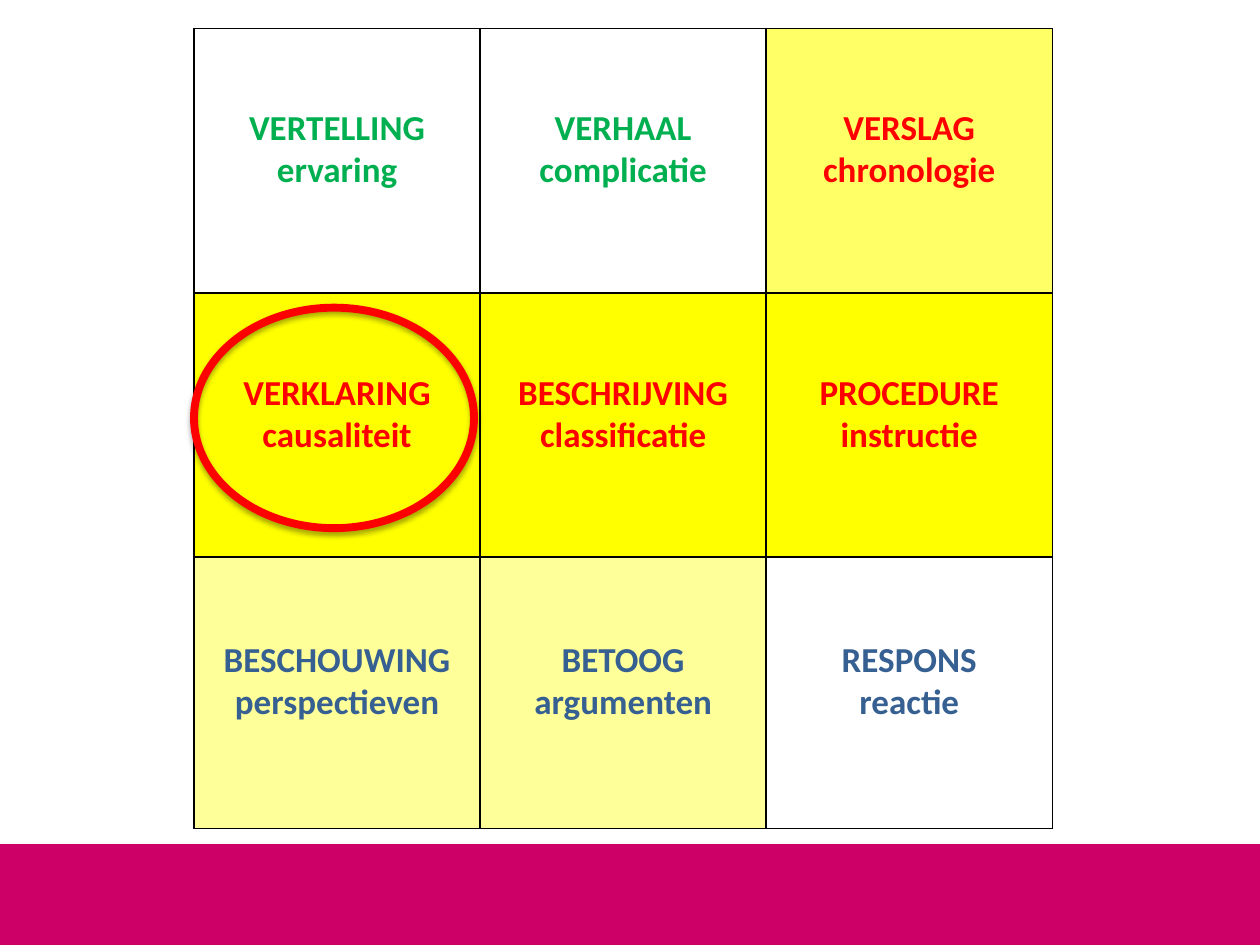
import pptx
import pptx.util
import pptx.dml.color
import pptx.enum.shapes
import pptx.enum.text
import pptx.oxml
import pptx.oxml.ns

Pt = pptx.util.Pt

COLORS = {
    "white": "FFFFFF", "black": "000000", "band": "CC0066",
    "green": "00B050", "red": "FF0000", "blue": "376092",
    "light": "FFFF66", "bright": "FFFF00", "pale": "FFFF99",
}
GENRES = [
    [("VERTELLING", "ervaring", "green", "white"),
     ("VERHAAL", "complicatie", "green", "white"),
     ("VERSLAG", "chronologie", "red", "light")],
    [("VERKLARING", "causaliteit", "red", "bright"),
     ("BESCHRIJVING", "classificatie", "red", "bright"),
     ("PROCEDURE", "instructie", "red", "bright")],
    [("BESCHOUWING", "perspectieven", "blue", "pale"),
     ("BETOOG", "argumenten", "blue", "pale"),
     ("RESPONS", "reactie", "blue", "white")],
]
COL_WIDTH = 163.5
ROW_HEIGHTS = [151, 151, 155]
NS = pptx.oxml.ns.nsdecls("a")


def rgb(name):
    return pptx.dml.color.RGBColor.from_string(COLORS[name])


def add_shadow(shape):
    shape.shadow.inherit = False
    effects = shape._element.spPr.find(pptx.oxml.ns.qn("a:effectLst"))
    effects.append(pptx.oxml.parse_xml(
        f'<a:outerShdw {NS} blurRad="{Pt(3.15)}" dist="{Pt(1.8)}" dir="5400000" rotWithShape="0">'
        f'<a:srgbClr val="{COLORS["black"]}"><a:alpha val="35000"/></a:srgbClr></a:outerShdw>'))


def add_borders(cell):
    tcPr = cell._tc.get_or_add_tcPr()
    for side in ("lnL", "lnR", "lnT", "lnB"):
        tcPr.append(pptx.oxml.parse_xml(
            f'<a:{side} {NS} w="{Pt(1)}"><a:solidFill>'
            f'<a:srgbClr val="{COLORS["black"]}"/></a:solidFill></a:{side}>'))


def fill_cell(cell, genre, feature, ink, fill):
    add_borders(cell)
    cell.fill.solid()
    cell.fill.fore_color.rgb = rgb(fill)
    cell.vertical_anchor = pptx.enum.text.MSO_ANCHOR.MIDDLE
    cell.margin_left = cell.margin_right = Pt(3)
    cell.margin_top = cell.margin_bottom = 0
    cell.text_frame.text = f"{genre}\n{feature}"
    for p in cell.text_frame.paragraphs:
        p.alignment = pptx.enum.text.PP_ALIGN.CENTER
        p.line_spacing = p.space_after = Pt(12)
        font = p.runs[0].font
        font.name, font.size, font.bold = "Calibri", Pt(20), True
        font.color.rgb = rgb(ink)


prs = pptx.Presentation()
prs.slide_width, prs.slide_height = Pt(720), Pt(540)
s = prs.slides.add_slide(prs.slide_layouts[6])
shapes = pptx.enum.shapes.MSO_SHAPE

band = s.shapes.add_shape(shapes.RECTANGLE, 0, Pt(482.4), Pt(720), Pt(57.6))
band.fill.solid()
band.fill.fore_color.rgb = rgb("band")
band.line.fill.background()
add_shadow(band)

table = s.shapes.add_table(3, 3, Pt(110.9), Pt(16.4), Pt(3 * COL_WIDTH), Pt(sum(ROW_HEIGHTS))).table
for col in table.columns:
    col.width = Pt(COL_WIDTH)
for r, (height, genres) in enumerate(zip(ROW_HEIGHTS, GENRES)):
    table.rows[r].height = Pt(height)
    for c, content in enumerate(genres):
        fill_cell(table.cell(r, c), *content)

ring = s.shapes.add_shape(shapes.OVAL, Pt(110.9), Pt(175.8), Pt(160), Pt(126))
ring.fill.background()
ring.line.color.rgb = rgb("red")
ring.line.width = Pt(4.5)
add_shadow(ring)

prs.save("out.pptx")
